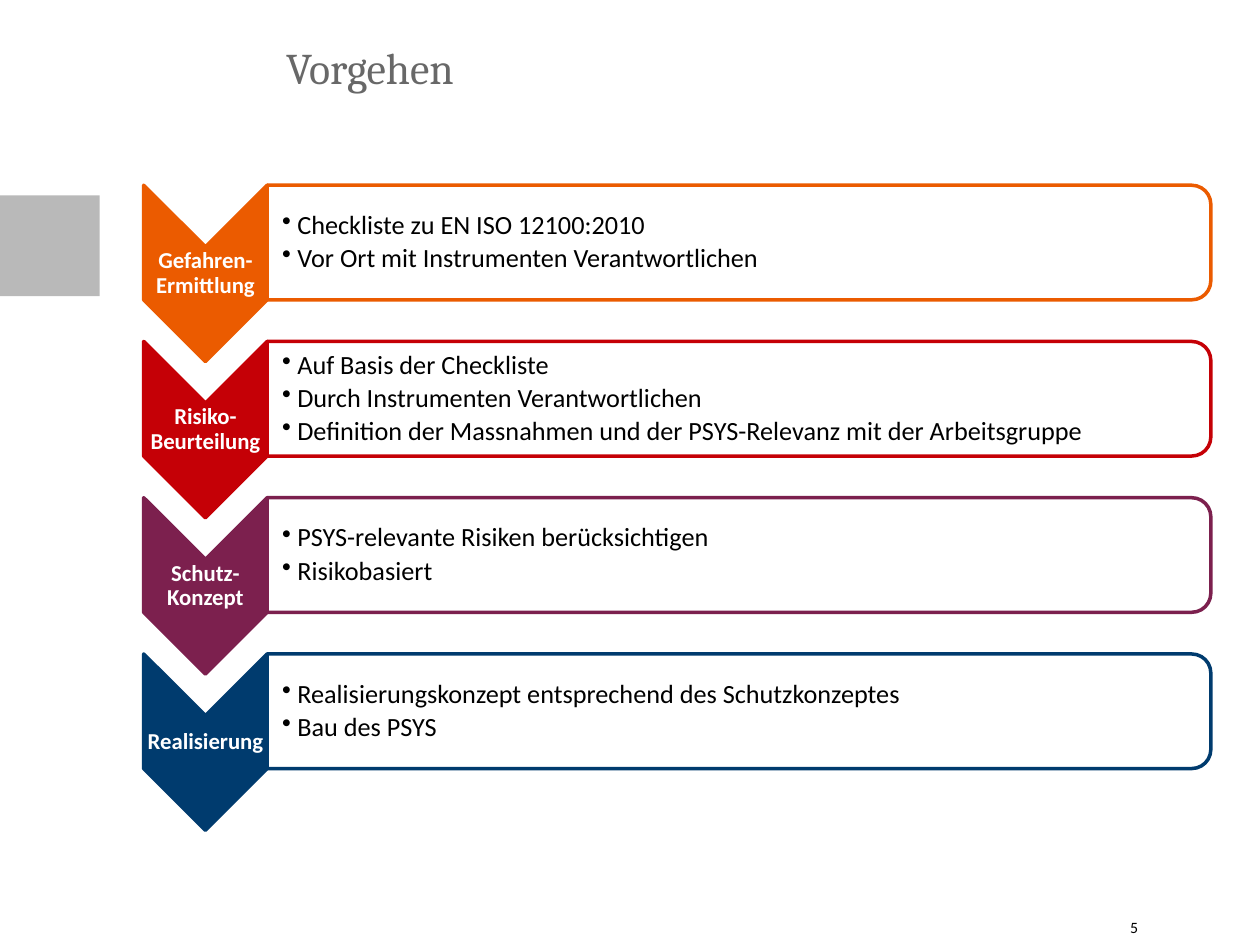
from dataclasses import dataclass

from lxml.etree import SubElement
from pptx import Presentation
from pptx.dml.color import RGBColor
from pptx.enum.shapes import MSO_SHAPE
from pptx.enum.text import MSO_ANCHOR, MSO_AUTO_SIZE, PP_ALIGN
from pptx.oxml.ns import qn
from pptx.slide import Slide
from pptx.util import Inches, Pt

WHITE = RGBColor(0xFF, 0xFF, 0xFF)
BLACK = RGBColor(0x00, 0x00, 0x00)
TITLE_GRAY = RGBColor(0x68, 0x68, 0x68)
MARKER_GRAY = RGBColor(0xB9, 0xB9, 0xB9)
ORANGE = RGBColor(0xEB, 0x5B, 0x00)
RED = RGBColor(0xC5, 0x00, 0x06)
PURPLE = RGBColor(0x7C, 0x20, 0x4E)
BLUE = RGBColor(0x00, 0x3B, 0x6E)

# The grid has 100 columns and 75 rows on a slide of 10 by 7.5 inches.
CELL = Inches(0.1)
COLUMNS, ROWS = 100, 75

STEP_TOP, STEP_PITCH = 14.7, 12.4
CHEVRON_LEFT, CHEVRON_WIDTH, CHEVRON_HEIGHT = 11.4, 9.8, 14
PANEL_LEFT = CHEVRON_LEFT + CHEVRON_WIDTH
PANEL_WIDTH, PANEL_HEIGHT = 74.9, 9.1

STEPS = [
    ("Gefahren-Ermittlung", ORANGE, [
        "Checkliste zu EN ISO 12100:2010",
        "Vor Ort mit Instrumenten Verantwortlichen"]),
    ("Risiko-Beurteilung", RED, [
        "Auf Basis der Checkliste",
        "Durch Instrumenten Verantwortlichen",
        "Definition der Massnahmen und der PSYS-Relevanz mit der Arbeitsgruppe"]),
    ("Schutz-Konzept", PURPLE, [
        "PSYS-relevante Risiken berücksichtigen",
        "Risikobasiert"]),
    ("Realisierung", BLUE, [
        "Realisierungskonzept entsprechend des Schutzkonzeptes",
        "Bau des PSYS"]),
]


def grid(*cells):
    return [round(cell * CELL) for cell in cells]


@dataclass
class SlideBuilder:
    slide: Slide
    body_font: str = "Calibri"
    title_font: str = "Cambria"
    line_width: float = 2

    def set_frame(self, text_frame, insets=(0, 0, 0, 0), anchor=MSO_ANCHOR.TOP):
        text_frame.word_wrap = True
        text_frame.auto_size = MSO_AUTO_SIZE.NONE
        text_frame.vertical_anchor = anchor
        (text_frame.margin_left, text_frame.margin_top,
         text_frame.margin_right, text_frame.margin_bottom) = grid(*insets)

    def add_run(self, paragraph, text, size, color, font=None, bold=False):
        run = paragraph.add_run()
        run.text = text
        run.font.name = font or self.body_font
        run.font.size = Pt(size)
        run.font.bold = bold
        run.font.color.rgb = color

    def title(self, text, left, top, width, height):
        shape = self.slide.shapes.title
        shape.left, shape.top, shape.width, shape.height = grid(left, top, width, height)
        self.set_frame(shape.text_frame)
        paragraph = shape.text_frame.paragraphs[0]
        paragraph.alignment = PP_ALIGN.LEFT
        self.add_run(paragraph, text, 25, TITLE_GRAY, self.title_font)

    def shape(self, kind, left, top, width, height, fill, line=None):
        shape = self.slide.shapes.add_shape(kind, *grid(left, top, width, height))
        shape.shadow.inherit = False
        shape.fill.solid()
        shape.fill.fore_color.rgb = fill
        if line is None:
            shape.line.fill.background()
        else:
            shape.line.color.rgb = line
            shape.line.width = Pt(self.line_width)
        return shape

    def turned_shape(self, kind, left, top, width, height, fill, line):
        """Add a shape turned clockwise by 90 degrees that covers the given area."""
        shift = (width - height) / 2
        shape = self.shape(kind, left + shift, top - shift, height, width, fill, line)
        shape.rotation = 90
        return shape

    def text_box(self, left, top, width, height, insets=(0, 0, 0, 0), anchor=MSO_ANCHOR.TOP):
        box = self.slide.shapes.add_textbox(*grid(left, top, width, height))
        self.set_frame(box.text_frame, insets, anchor)
        return box.text_frame

    def label(self, text, left, top, width, height):
        frame = self.text_box(left, top, width, height, (0.1,) * 4, MSO_ANCHOR.MIDDLE)
        paragraph = frame.paragraphs[0]
        paragraph.alignment = PP_ALIGN.CENTER
        paragraph.line_spacing = 0.9
        self.add_run(paragraph, text, 13, WHITE, bold=True)

    def bullets(self, items, left, top, width, height):
        frame = self.text_box(left, top, width, height, (1.2, 0.1, 0.1, 0.1), MSO_ANCHOR.MIDDLE)
        for index, item in enumerate(items):
            paragraph = frame.add_paragraph() if index else frame.paragraphs[0]
            paragraph.level = 1
            paragraph.line_spacing = 0.9
            paragraph.space_after = Pt(2.7)
            properties = paragraph._p.get_or_add_pPr()
            indent = Inches(0.12)
            properties.set("marL", str(indent))
            properties.set("indent", str(-indent))
            SubElement(properties, qn("a:buChar"), char="•")
            self.add_run(paragraph, item, 15, BLACK)

    def step(self, index, name, color, items):
        top = STEP_TOP + index * STEP_PITCH
        self.turned_shape(MSO_SHAPE.CHEVRON, CHEVRON_LEFT, top,
                          CHEVRON_WIDTH, CHEVRON_HEIGHT, color, color)
        self.label(name, CHEVRON_LEFT, top + CHEVRON_WIDTH / 2,
                   CHEVRON_WIDTH, CHEVRON_HEIGHT - CHEVRON_WIDTH)
        panel = self.turned_shape(MSO_SHAPE.ROUND_2_SAME_RECTANGLE, PANEL_LEFT, top,
                                  PANEL_WIDTH, PANEL_HEIGHT, WHITE, color)
        fill_color = panel._element.spPr.find(qn("a:solidFill"))[0]
        SubElement(fill_color, qn("a:alpha"), val="90000")
        self.bullets(items, PANEL_LEFT, top + 0.45, PANEL_WIDTH - 0.5, PANEL_HEIGHT - 0.9)

    def page_number(self, text, left, top, width, height):
        frame = self.text_box(left, top, width, height)
        self.add_run(frame.paragraphs[0], text, 9, BLACK)


def main():
    presentation = Presentation()
    presentation.slide_width, presentation.slide_height = grid(COLUMNS, ROWS)
    slide = presentation.slides.add_slide(presentation.slide_layouts[5])
    builder = SlideBuilder(slide)
    builder.title("Vorgehen", 22.7, 3.2, 73.4, 5.6)
    builder.shape(MSO_SHAPE.RECTANGLE, 0, 15.5, 7.9, 8, MARKER_GRAY)
    for index, (name, color, items) in enumerate(STEPS):
        builder.step(index, name, color, items)
    builder.page_number("5", 89.7, 72.8, 6.3, 2.2)
    presentation.save("out.pptx")


if __name__ == "__main__":
    main()
